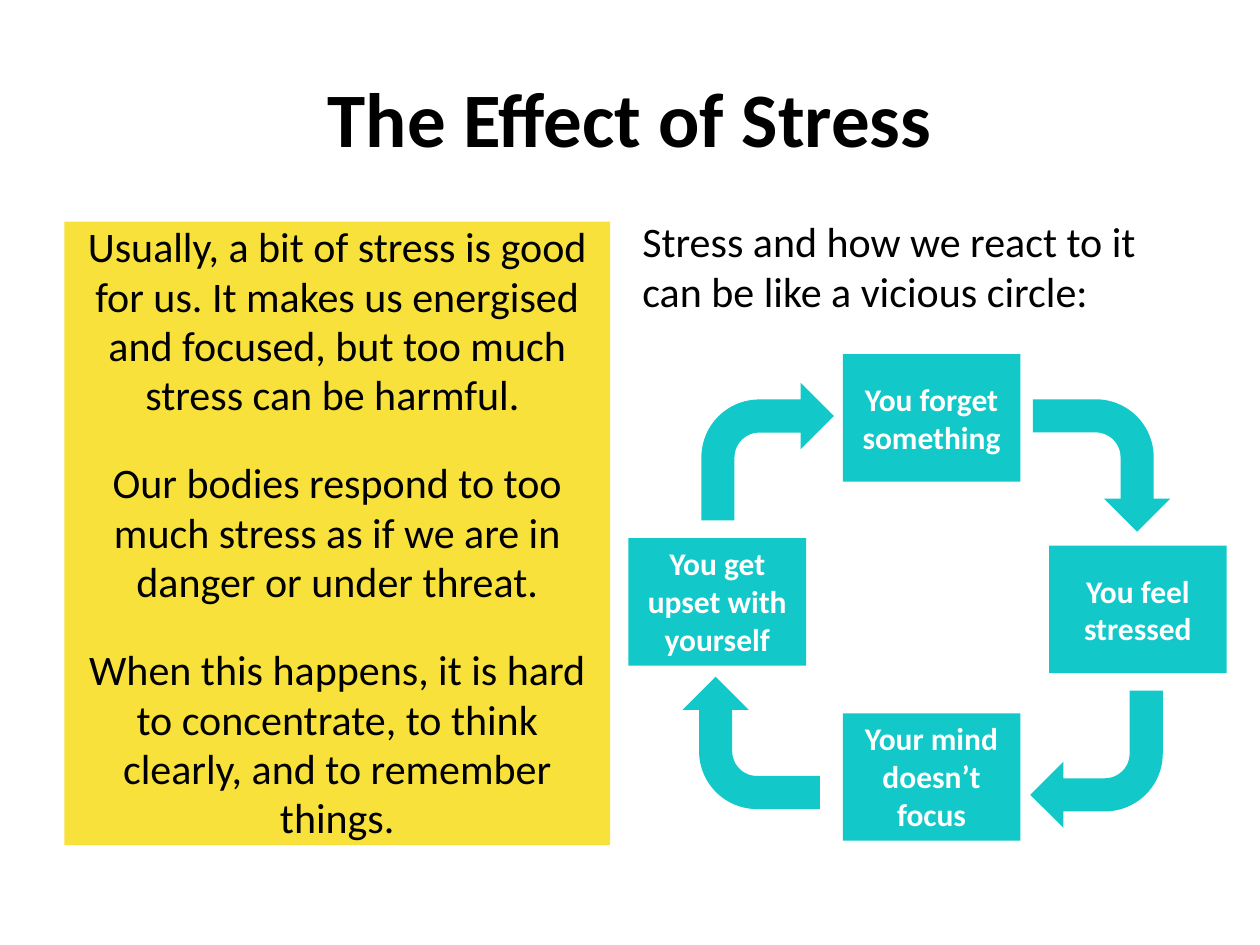
import dataclasses

import pptx
import pptx.dml.color
import pptx.enum.shapes
import pptx.enum.text
import pptx.util

Cm, Pt = pptx.util.Cm, pptx.util.Pt
Shape = pptx.enum.shapes.MSO_SHAPE
Align = pptx.enum.text.PP_ALIGN
Anchor = pptx.enum.text.MSO_ANCHOR
Fit = pptx.enum.text.MSO_AUTO_SIZE


@dataclasses.dataclass(frozen=True)
class Theme:
    font: str = "Calibri"
    ink: str = "000000"
    light: str = "FFFFFF"
    teal: str = "12C8C8"
    yellow: str = "F8E13A"
    title: float = 44
    body: float = 24
    label: float = 18


THEME = Theme()

FACTS = [
    "Usually, a bit of stress is good for us. It makes us energised and "
    "focused, but too much stress can be harmful.\u00a0",
    "Our bodies respond to too much stress as if we are in danger or under threat.",
    "When this happens, it is hard to concentrate, to think clearly, and to "
    "remember things.",
]
INTRO = "Stress and how we react to it can be like a vicious circle:"

# Label, left and top within the cycle, anchor
STEPS = [
    ("You forget something", 4.32, 0, Anchor.MIDDLE),
    ("You feel stressed", 8.48, 3.86, Anchor.MIDDLE),
    ("Your mind doesn’t focus", 4.32, 7.24, Anchor.TOP),
    ("You get upset with yourself", 0, 3.71, Anchor.TOP),
]
# Left and top within the cycle, each a quarter turn after the one before
BENDS = [(1.47, 0.58), (8.2, 0.86), (8.1, 6.78), (1.14, 6.45)]
STEP_SIZE = (3.58, 2.57)
BEND_SIZE = (2.67, 2.77)


def put(item, values):
    for name, value in values.items():
        setattr(item, name, value)


def write(shape, texts, size, color, bold=False, align=Align.CENTER,
          anchor=Anchor.MIDDLE, fit=Fit.NONE):
    """Fill the shape with one paragraph per text and return the paragraphs."""
    frame = shape.text_frame
    frame.text = "\n".join(texts)
    put(frame, {"word_wrap": True, "vertical_anchor": anchor, "auto_size": fit})
    for para in frame.paragraphs:
        para.alignment = align
        for run in para.runs:
            put(run.font, {"name": THEME.font, "size": Pt(size), "bold": bold})
            run.font.color.rgb = pptx.dml.color.RGBColor.from_string(color)
    return frame.paragraphs


def draw(slide, kind, box, color):
    shape = slide.shapes.add_shape(kind, *map(Cm, box))
    shape.shadow.inherit = False
    shape.fill.solid()
    shape.fill.fore_color.rgb = pptx.dml.color.RGBColor.from_string(color)
    shape.line.fill.background()
    return shape


def head(slide, box):
    title = slide.shapes.title
    put(title, dict(zip(("left", "top", "width", "height"), map(Cm, box))))
    write(title, ["The Effect of Stress"], THEME.title, THEME.ink, bold=True)


def panel(slide, box):
    shape = draw(slide, Shape.RECTANGLE, box, THEME.yellow)
    paras = write(shape, FACTS, THEME.body, THEME.ink)
    for index, para in enumerate(paras):
        gap = 22 if index else 5
        put(para, {"space_before": Pt(gap), "line_spacing": 0.98})


def intro(slide, box):
    text = slide.shapes.add_textbox(*map(Cm, box))
    write(text, [INTRO], THEME.body, THEME.ink, align=Align.LEFT,
          anchor=Anchor.TOP, fit=Fit.SHAPE_TO_FIT_TEXT)


def cycle(slide, left, top):
    for label, x, y, anchor in STEPS:
        step = draw(slide, Shape.RECTANGLE, (left + x, top + y, *STEP_SIZE),
                    THEME.teal)
        write(step, [label], THEME.label, THEME.light, bold=True,
              anchor=anchor, fit=Fit.SHAPE_TO_FIT_TEXT)
    for turn, (x, y) in enumerate(BENDS):
        bend = draw(slide, Shape.BENT_ARROW, (left + x, top + y, *BEND_SIZE),
                    THEME.teal)
        bend.rotation = 90 * turn


def main():
    deck = pptx.Presentation()
    put(deck, {"slide_width": Cm(25.4), "slide_height": Cm(19.05)})
    slide = deck.slides.add_slide(deck.slide_layouts.get_by_name("Title Only"))
    head(slide, (1.27, 0.76, 22.86, 3.18))
    panel(slide, (1.3, 4.47, 11, 12.57))
    intro(slide, (12.7, 4.22, 11.84, 2.31))
    cycle(slide, 12.67, 7.14)
    deck.save("out.pptx")


if __name__ == "__main__":
    main()
